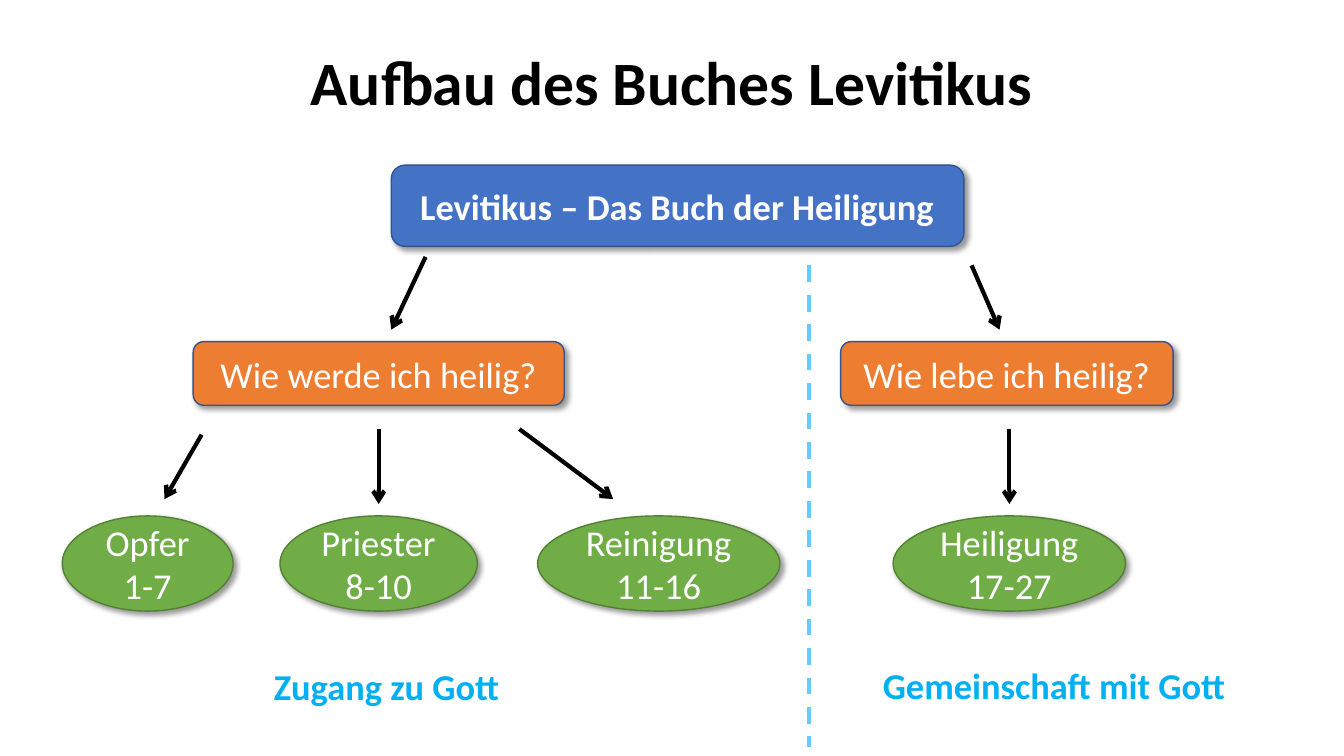
from lxml.etree import SubElement
from pptx import Presentation
from pptx.dml.color import RGBColor
from pptx.enum.dml import MSO_LINE_DASH_STYLE as DASH
from pptx.enum.shapes import MSO_CONNECTOR as CONNECTOR, MSO_SHAPE as SHAPE
from pptx.enum.text import MSO_ANCHOR as ANCHOR, MSO_AUTO_SIZE as AUTO_SIZE, PP_ALIGN as ALIGN
from pptx.oxml.ns import qn
from pptx.util import Pt


def color(value):
    return RGBColor.from_string(value)


def write(shape, text, text_color, align, **formats):
    shape.text_frame.text = text
    for paragraph in shape.text_frame.paragraphs:
        paragraph.alignment = align
        font = paragraph.runs[0].font
        font.color.rgb = color(text_color)
        for name, value in ({"name": "Calibri", "size": Pt(26), "bold": False} | formats).items():
            setattr(font, name, value)


presentation = Presentation()
presentation.slide_width, presentation.slide_height = Pt(960), Pt(540)
slide = presentation.slides.add_slide(presentation.slide_layouts[5])

title = slide.shapes.title
for name, value in {"left": 66, "top": 29, "width": 828, "height": 64}.items():
    setattr(title, name, Pt(value))
write(title, "Aufbau des Buches Levitikus", "000000", ALIGN.CENTER, size=Pt(44), bold=True)
title.text_frame.vertical_anchor = ANCHOR.MIDDLE
title.text_frame.paragraphs[0].line_spacing = 0.9

levels = [
    (SHAPE.ROUNDED_RECTANGLE, "4472C4", "325491", True, 118, 58, [
        ("Levitikus – Das Buch der Heiligung", 279.5, 409)]),
    (SHAPE.ROUNDED_RECTANGLE, "ED7D31", "325491", False, 244, 45.5, [
        ("Wie werde ich heilig?", 138, 265),
        ("Wie lebe ich heilig?", 600.5, 237.5)]),
    (SHAPE.OVAL, "70AD47", "538035", False, 368.5, 68, [
        ("Opfer\n1-7", 44.5, 122),
        ("Priester\n8-10", 200, 141),
        ("Reinigung\n11-16", 384, 173),
        ("Heiligung\n17-27", 638, 166)]),
]
for kind, fill, outline, bold, top, height, nodes in levels:
    for text, left, width in nodes:
        node = slide.shapes.add_shape(kind, Pt(left), Pt(top), Pt(width), Pt(height))
        node.fill.solid()
        node.fill.fore_color.rgb = color(fill)
        node.line.color.rgb = color(outline)
        node.line.width = Pt(1)
        node.shadow.inherit = False
        effects = node._element.spPr.find(qn("a:effectLst"))
        shadow = SubElement(effects, qn("a:outerShdw"), blurRad=str(Pt(4)), dist=str(Pt(3)),
                            dir="2700000", algn="tl", rotWithShape="0")
        shade = SubElement(shadow, qn("a:srgbClr"), val="000000")
        SubElement(shade, qn("a:alpha"), val="40000")
        write(node, text, "FFFFFF", ALIGN.CENTER, bold=bold)
        node.text_frame.vertical_anchor = ANCHOR.MIDDLE

arrows = [
    (304, 183.5, 279.5, 235.5),
    (694, 189.5, 714, 235.5),
    (371, 306.5, 438, 356.5),
    (270.5, 306.5, 270.5, 360),
    (144, 310.5, 117.5, 356.5),
    (721, 306.5, 721, 360),
]
divider = (578, 189.5, 578, 533.5)
for ends in [*arrows, divider]:
    line = slide.shapes.add_connector(CONNECTOR.STRAIGHT, *map(Pt, ends))
    line.line.width = Pt(3)
    line.line.color.rgb = color("66CCFF" if ends == divider else "000000")
    if ends == divider:
        line.line.dash_style = DASH.DASH
    else:
        SubElement(line.line._get_or_add_ln(), qn("a:tailEnd"), type="arrow")
    SubElement(line._element.spPr, qn("a:effectLst"))

for text, left, top, width in [
    ("Zugang zu Gott", 188.5, 471, 178),
    ("Gemeinschaft mit Gott", 623.5, 470, 263),
]:
    label = slide.shapes.add_textbox(Pt(left), Pt(top), Pt(width), Pt(39))
    write(label, text, "00B0F0", ALIGN.LEFT, bold=True)
    label.text_frame.word_wrap = False
    label.text_frame.auto_size = AUTO_SIZE.SHAPE_TO_FIT_TEXT

presentation.save("out.pptx")
